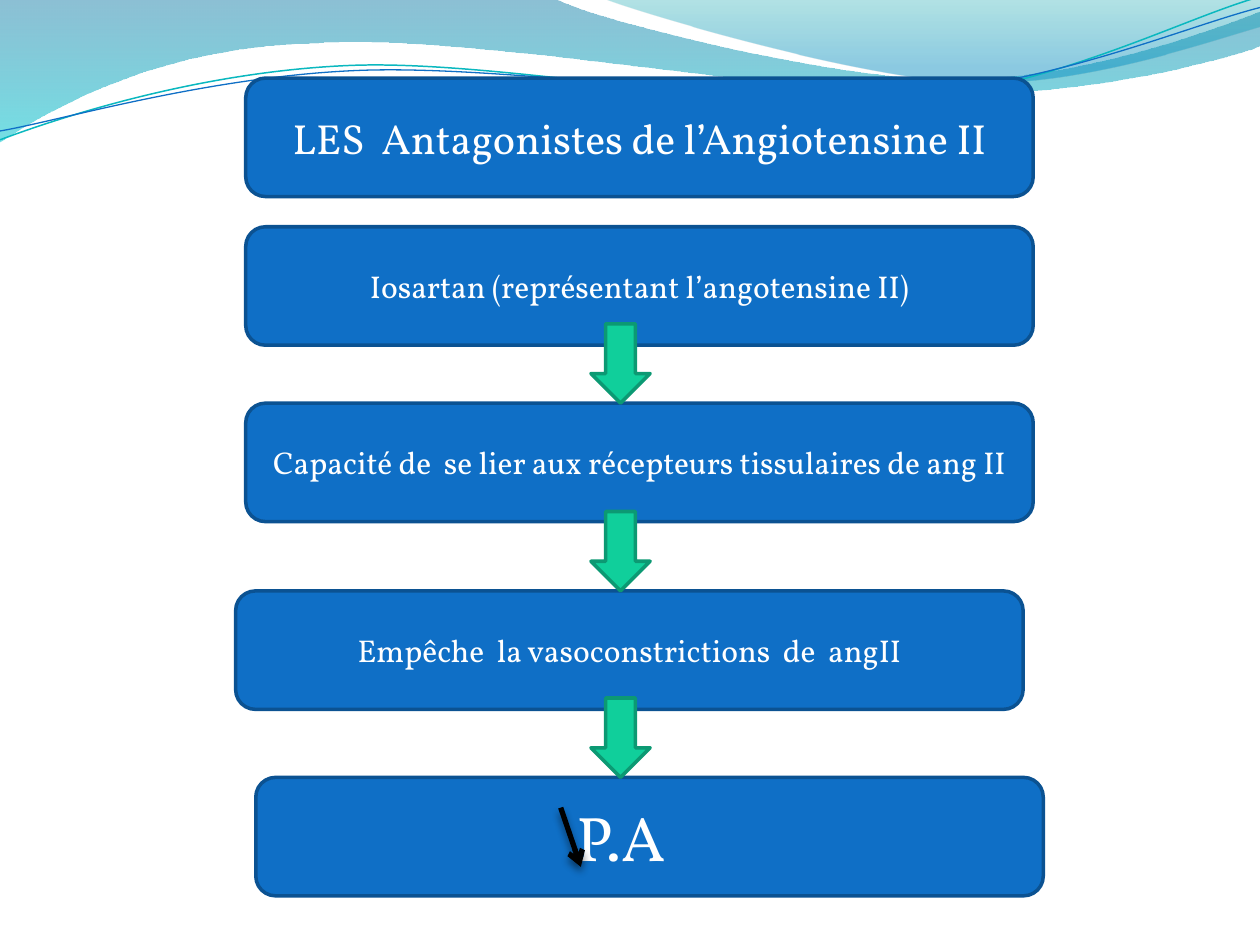
from dataclasses import dataclass
from math import cos, radians, sin
from typing import NamedTuple

from lxml.etree import SubElement
from pptx import Presentation
from pptx.dml.color import RGBColor as RGB
from pptx.enum.shapes import MSO_CONNECTOR as CONN, MSO_SHAPE as SHAPE
from pptx.enum.text import MSO_ANCHOR as ANCHOR, PP_ALIGN as ALIGN
from pptx.oxml.ns import qn
from pptx.util import Inches, Pt


@dataclass(frozen=True)
class Theme:
    font: str = "Vollkorn"
    text: str = "FFFFFF"
    box: str = "0F6FC6"
    box_edge: str = "0B5292"
    arrow: str = "10CF9B"
    arrow_edge: str = "0C9973"
    teal: str = "0AB8BF"
    ink: str = "000000"
    title: int = 24
    body: int = 18
    result: int = 36
    edge: float = 2


class Stop(NamedTuple):
    position: float
    color: str
    alpha: int


class Wave(NamedTuple):
    segments: list
    stops: tuple = ()
    color: str = ""
    width: float = 0
    tilt: float = 0
    center: tuple = (0, 0)


class Step(NamedTuple):
    left: float
    top: float
    text: str
    size: int
    right_inset: float = 0.1


T = Theme()
BOX_W, BOX_H = 6.25, 0.94
ARROW_X, ARROW_W, ARROW_H = 4.69, 0.47, 0.63
TILT = -2.7

WAVES = [
    Wave([(0, 0), (4.4, -0.01), (4.76, 0.17, 6.64, 0.63, 7.58, 0.63),
          (8.53, 0.63, 9.58, 0.26, 10, 0.09), (10.01, 0.36),
          (9.83, 0.44, 8.7, 0.76, 7.46, 0.75), (6.22, 0.75, 3.82, 0.28, 2.57, 0.34),
          (1.29, 0.36, 0.46, 0.83, -0.01, 1.13)],
         stops=(Stop(0, "0074A1", 45), Stop(1, "00C6CF", 55))),
    Wave([(4.79, -0.01), (5.09, 0.11, 6.82, 0.62, 7.69, 0.65),
          (8.56, 0.69, 9.61, 0.32, 10, 0.21), (10, 0)],
         stops=(Stop(0, "00A1A9", 30), Stop(0.8, "008BBF", 45))),
    Wave([(0, 1.11), (0.48, 0.93, 1.58, 0.57, 2.77, 0.52),
          (3.95, 0.47, 5.93, 0.89, 7.13, 0.8), (8.33, 0.71, 9.38, 0.15, 9.98, -0.02)],
         color=T.teal, width=0.85, tilt=TILT, center=(4.99, 0.57)),
    Wave([(0, 1.04), (0.47, 0.96, 1.64, 0.61, 2.83, 0.56),
          (4.03, 0.51, 5.97, 0.84, 7.17, 0.75), (8.36, 0.67, 9.41, 0.21, 10, 0.06)],
         color=T.box, width=0.75, tilt=TILT, center=(5, 0.59)),
]

TITLE = Step(1.95, 0.62, "LES  Antagonistes de l’Angiotensine II", T.title)
STEPS = [
    Step(1.95, 1.8, "Iosartan (représentant l’angotensine II)", T.body),
    Step(1.95, 3.2, "Capacité de  se lier aux récepteurs tissulaires de ang II", T.body),
    Step(1.87, 4.69, "Empêche  la vasoconstrictions  de  angII", T.body),
    Step(2.03, 6.17, "P.A", T.result, right_inset=0.55),
]


def level(wave: Wave, x: float, y: float) -> tuple:
    cx, cy = wave.center
    a = radians(-wave.tilt)
    dx, dy = x - cx, y - cy
    return (Inches(cx + dx * cos(a) - dy * sin(a)),
            Inches(cy + dx * sin(a) + dy * cos(a)))


def draw_curves(sp, segments: list) -> None:
    lines = list(sp._element.spPr.iter(qn("a:lnTo")))
    for line, points in zip(lines, segments[1:]):
        if len(points) == 1:
            continue
        line.tag = qn("a:cubicBezTo")
        for pt in list(line):
            line.remove(pt)
        for x, y in points:
            SubElement(line, qn("a:pt"), x=str(x - sp.left), y=str(y - sp.top))


def add_wave(s, wave: Wave) -> None:
    segments = [[level(wave, *seg[i:i + 2]) for i in range(0, len(seg), 2)]
                for seg in wave.segments]
    ends = [points[-1] for points in segments]
    builder = s.shapes.build_freeform(*ends[0])
    builder.add_line_segments(ends[1:], close=bool(wave.stops))
    sp = builder.convert_to_shape()
    draw_curves(sp, segments)
    sp.rotation = wave.tilt
    sp.shadow.inherit = False
    if not wave.stops:
        sp.fill.background()
        sp.line.color.rgb = RGB.from_string(wave.color)
        sp.line.width = Pt(wave.width)
        return
    sp.line.fill.background()
    sp.fill.gradient()
    sp.fill.gradient_angle = 270
    for target, stop in zip(sp.fill.gradient_stops, wave.stops):
        target.position = stop.position
        target.color.rgb = RGB.from_string(stop.color)
    for clr, stop in zip(sp._element.spPr.iter(qn("a:srgbClr")), wave.stops):
        SubElement(clr, qn("a:alpha"), val=str(stop.alpha * 1000))


def add_block(s, kind, box: tuple, fill: str, edge: str):
    sp = s.shapes.add_shape(kind, *map(Inches, box))
    sp.shadow.inherit = False
    sp.fill.solid()
    sp.fill.fore_color.rgb = RGB.from_string(fill)
    sp.line.color.rgb = RGB.from_string(edge)
    sp.line.width = Pt(T.edge)
    return sp


def add_step(s, step: Step) -> None:
    sp = add_block(s, SHAPE.FLOWCHART_ALTERNATE_PROCESS,
                   (step.left, step.top, BOX_W, BOX_H), T.box, T.box_edge)
    tf = sp.text_frame
    tf.word_wrap = True
    tf.vertical_anchor = ANCHOR.MIDDLE
    tf.margin_right = Inches(step.right_inset)
    p = tf.paragraphs[0]
    p.alignment = ALIGN.CENTER
    r = p.add_run()
    r.text = step.text
    r.font.name = T.font
    r.font.size = Pt(step.size)
    r.font.color.rgb = RGB.from_string(T.text)


def add_decrease_arrow(s) -> None:
    line = s.shapes.add_connector(CONN.STRAIGHT, Inches(4.45), Inches(6.41),
                                  Inches(4.61), Inches(6.88))
    line.line.color.rgb = RGB.from_string(T.ink)
    line.line.width = Pt(3)
    sp_pr = line._element.spPr
    SubElement(sp_pr.find(qn("a:ln")), qn("a:tailEnd"), type="arrow")
    effects = SubElement(sp_pr, qn("a:effectLst"))
    shadow = SubElement(effects, qn("a:outerShdw"), blurRad=str(Pt(4.5)),
                        dist=str(Pt(3)), dir="5400000", rotWithShape="0")
    clr = SubElement(shadow, qn("a:srgbClr"), val=T.ink)
    SubElement(clr, qn("a:alpha"), val="48000")


def main() -> None:
    prs = Presentation()
    prs.slide_width, prs.slide_height = Inches(10), Inches(7.5)
    s = prs.slides.add_slide(prs.slide_layouts[6])
    for wave in WAVES:
        add_wave(s, wave)
    for step in STEPS:
        add_step(s, step)
    for step in STEPS[1:]:
        add_block(s, SHAPE.DOWN_ARROW,
                  (ARROW_X, step.top - ARROW_H, ARROW_W, ARROW_H),
                  T.arrow, T.arrow_edge)
    add_decrease_arrow(s)
    add_step(s, TITLE)
    prs.save("out.pptx")


if __name__ == "__main__":
    main()
